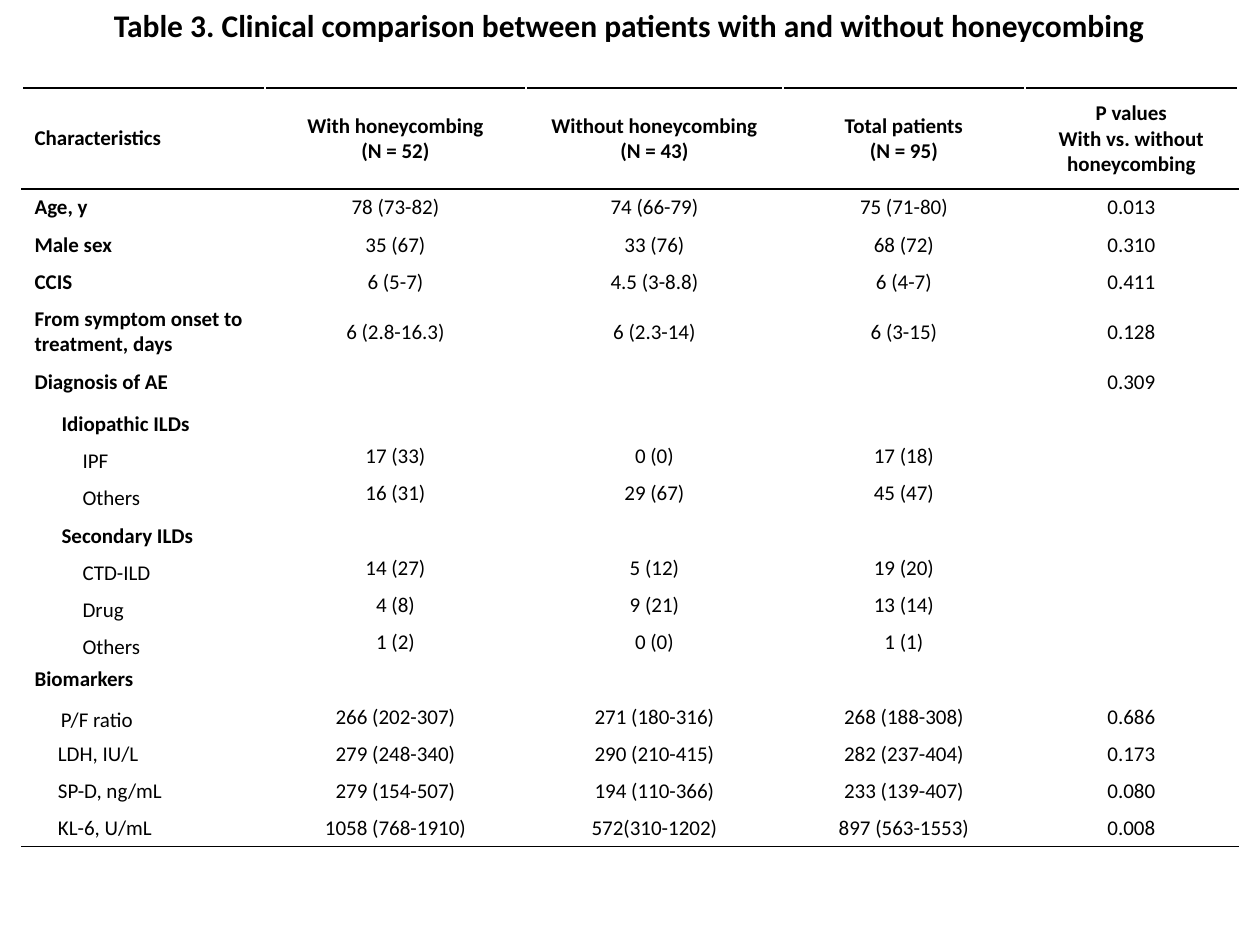
import lxml.etree
import pptx
import pptx.dml.color
import pptx.enum.text
import pptx.oxml.ns
import pptx.util

PX = 914400 // 126
FONT = "Calibri"
COLORS = {"ink": "000000"}
ALIGN = pptx.enum.text.PP_ALIGN
ANCHOR = pptx.enum.text.MSO_ANCHOR

COLUMNS = [243, 261, 257, 242, 213]
HEADER_HEIGHT, TWO_LINE_HEIGHT, ROW_HEIGHT = 101, 63, 37
HEADINGS = [
    "Characteristics",
    "With honeycombing\n(N = 52)",
    "Without honeycombing\n(N = 43)",
    "Total patients\n(N = 95)",
    "P values\nWith vs. without honeycombing",
]

# Label format: bold, left indent, downward shift, tight margins
MAIN = dict(bold=True)
GROUP = dict(bold=True, indent=27, shift=5)
DISEASE = dict(indent=48, shift=5)
RATIO = dict(indent=31, shift=3, tight=True, align=ALIGN.JUSTIFY)
MARKER = dict(indent=28, tight=True, align=ALIGN.JUSTIFY)
NONE = [""] * 3
ROWS = [
    (MAIN, "Age, y", "78 (73-82)", "74 (66-79)", "75 (71-80)", "0.013"),
    (MAIN, "Male sex", "35 (67)", "33 (76)", "68 (72)", "0.310"),
    (MAIN, "CCIS", "6 (5-7)", "4.5 (3-8.8)", "6 (4-7)", "0.411"),
    (MAIN, "From symptom onset to treatment, days",
     "6 (2.8-16.3)", "6 (2.3-14)", "6 (3-15)", "0.128"),
    (MAIN, "Diagnosis of AE", *NONE, "0.309"),
    (GROUP, "Idiopathic ILDs", *NONE, ""),
    (DISEASE, "IPF", "17 (33)", "0 (0)", "17 (18)", ""),
    (DISEASE, "Others", "16 (31)", "29 (67)", "45 (47)", ""),
    (GROUP, "Secondary ILDs", *NONE, ""),
    (DISEASE, "CTD-ILD", "14 (27)", "5 (12)", "19 (20)", ""),
    (DISEASE, "Drug", "4 (8)", "9 (21)", "13 (14)", ""),
    (DISEASE, "Others", "1 (2)", "0 (0)", "1 (1)", ""),
    (MAIN, "Biomarkers", *NONE, ""),
    (RATIO, "P/F ratio", "266 (202-307)", "271 (180-316)", "268 (188-308)", "0.686"),
    (MARKER, "LDH, IU/L", "279 (248-340)", "290 (210-415)", "282 (237-404)", "0.173"),
    (MARKER, "SP-D, ng/mL", "279 (154-507)", "194 (110-366)", "233 (139-407)", "0.080"),
    (MARKER, "KL-6, U/mL", "1058 (768-1910)", "572(310-1202)", "897 (563-1553)", "0.008"),
]


def px(length):
    return pptx.util.Emu(length * PX)


def write_text(frame, text, size=12, bold=False, align=ALIGN.LEFT, indent=0):
    """Write one paragraph for each line of text."""
    for number, line in enumerate(text.split("\n")):
        para = frame.paragraphs[0] if number == 0 else frame.add_paragraph()
        para.alignment = align
        if indent:
            para._p.get_or_add_pPr().set("marL", str(px(indent)))
        if not line:
            # An empty cell takes its row height from the end mark
            lxml.etree.SubElement(para._p, pptx.oxml.ns.qn("a:endParaRPr"),
                                  sz=str(size * 100))
            continue
        span = para.add_run()
        span.text = line
        span.font.name = FONT
        span.font.size = pptx.util.Pt(size)
        span.font.bold = bold
        span.font.color.rgb = pptx.dml.color.RGBColor.from_string(COLORS["ink"])


def add_rule(cell, side):
    """Draw a 1 pt border on the top (T) or bottom (B) of a cell."""
    qn = pptx.oxml.ns.qn
    line = lxml.etree.SubElement(cell._tc.get_or_add_tcPr(), qn("a:ln" + side),
                                 w=str(pptx.util.Pt(1)))
    fill = lxml.etree.SubElement(line, qn("a:solidFill"))
    lxml.etree.SubElement(fill, qn("a:srgbClr"), val=COLORS["ink"])


def fill_cell(cell, text, rules="", tight=False, shift=0, **text_format):
    for side in rules:
        add_rule(cell, side)
    cell.fill.background()
    cell.vertical_anchor = ANCHOR.MIDDLE
    if tight:
        cell.margin_left = cell.margin_right = px(8)
    top, bottom = (1, 0) if tight else (6, 6)
    if tight and shift:
        top += 2 * shift
    elif shift:
        top, bottom = top + shift, bottom - shift
    cell.margin_top, cell.margin_bottom = px(top), px(bottom)
    write_text(cell.text_frame, text, **text_format)


def add_title(page, text):
    box = page.shapes.add_textbox(px(98), px(0), px(1063), px(50))
    box.text_frame.word_wrap = False
    box.text_frame.auto_size = pptx.enum.text.MSO_AUTO_SIZE.SHAPE_TO_FIT_TEXT
    write_text(box.text_frame, text, size=18, bold=True, align=ALIGN.CENTER)


def add_clinical_table(page):
    heights = [HEADER_HEIGHT] + [
        TWO_LINE_HEIGHT if label.startswith("From") else ROW_HEIGHT
        for _, label, *_ in ROWS]
    table = page.shapes.add_table(len(heights), len(COLUMNS), px(22), px(88),
                                  px(sum(COLUMNS)), px(sum(heights))).table
    table.first_row = table.horz_banding = False
    for column, width in zip(table.columns, COLUMNS):
        column.width = px(width)
    for row, height in zip(table.rows, heights):
        row.height = px(height)

    for index, heading in enumerate(HEADINGS):
        fill_cell(table.cell(0, index), heading, rules="TB", bold=True,
                  tight=index > 0, align=ALIGN.CENTER if index else ALIGN.LEFT)
    for number, (label_format, label, *values) in enumerate(ROWS, start=1):
        rules = {1: "T", len(ROWS): "B"}.get(number, "")
        fill_cell(table.cell(number, 0), label, rules=rules, **label_format)
        for index, value in enumerate(values, start=1):
            fill_cell(table.cell(number, index), value, rules=rules, align=ALIGN.CENTER)


def main():
    deck = pptx.Presentation()
    deck.slide_width, deck.slide_height = px(1260), px(945)
    page = deck.slides.add_slide(deck.slide_layouts[6])
    add_title(page, "Table 3. Clinical comparison between patients with and without honeycombing")
    add_clinical_table(page)
    deck.save("out.pptx")


if __name__ == "__main__":
    main()
